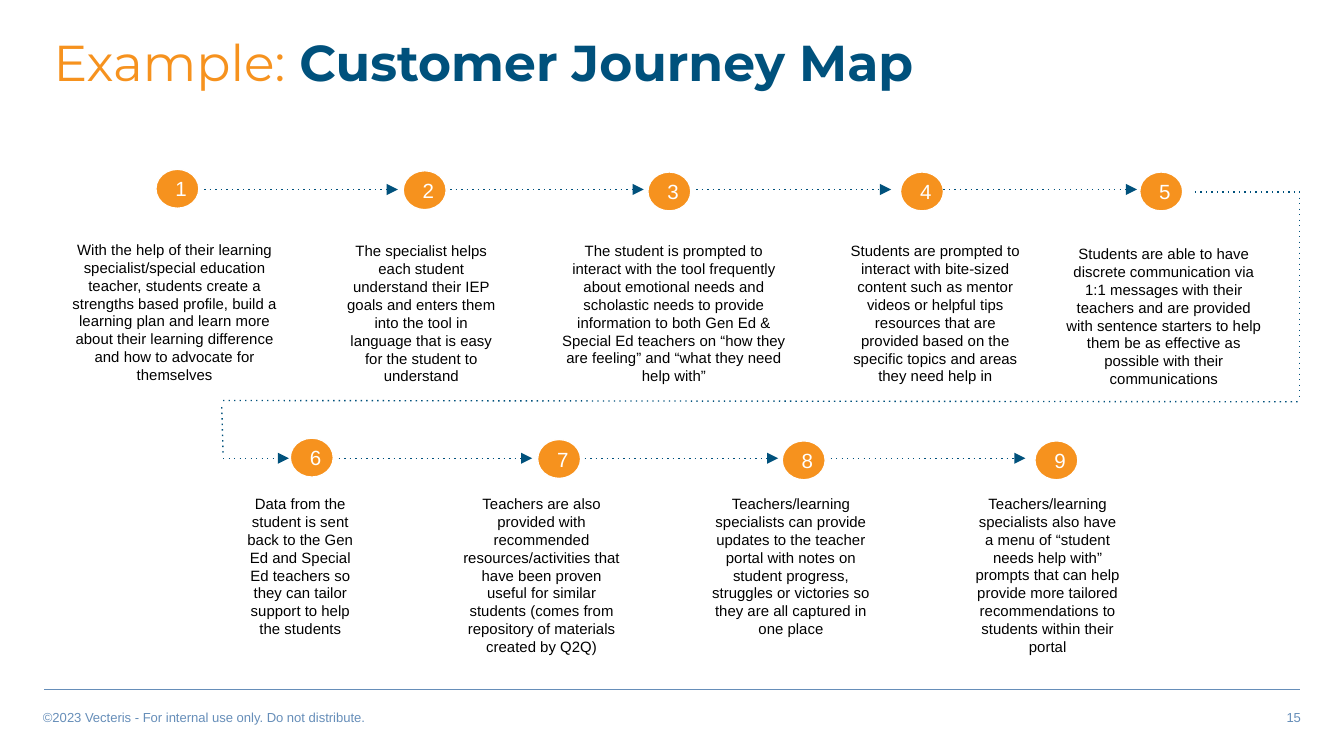
from lxml.etree import SubElement
from pptx import Presentation
from pptx.dml.color import RGBColor
from pptx.enum.shapes import MSO_CONNECTOR, MSO_SHAPE
from pptx.enum.text import MSO_ANCHOR, PP_ALIGN
from pptx.oxml.ns import qn
from pptx.util import Emu, Pt

PX = 9144  # 100 px to the inch
NAVY, ORANGE, BLUE, WHITE, BLACK = "00517C", "F6921E", "668EB9", "FFFFFF", "000000"
DX, DY = 100, 200  # shift from the upper row of steps to the lower one

CIRCLES = [(116, 126), (300, 127), (482, 128), (670, 128), (848, 128)]
ARROWS = [(152, 296), (335, 479), (518, 663), (702, 846)]
ARROW_Y = 141

# left, top, width, height, vertical inset, text
STEPS = [
    (43, 169, 174, 57, 10, "With the help of their learning specialist/special education teacher, "
     "students create a strengths based profile, build a learning plan and learn more about "
     "their learning difference and how to advocate for themselves"),
    (246, 170, 135, 86, 10, "The specialist helps each student understand their IEP goals and "
     "enters them into the tool in language that is easy for the student to understand"),
    (406, 175, 191, 74, 5, "The student is prompted to interact with the tool frequently about "
     "emotional needs and scholastic needs to provide information to both Gen Ed & Special Ed "
     "teachers on “how they are feeling” and “what they need help with”"),
    (619, 170, 154, 86, 10, "Students are prompted to interact with bite-sized content such as "
     "mentor videos or helpful tips resources that are provided based on the specific topics "
     "and areas they need help in"),
    (782, 172, 168, 74, 10, "Students are able to have discrete communication via 1:1 messages "
     "with their teachers and are provided with sentence starters to help them be as effective "
     "as possible with their communications"),
    (172, 358, 103, 88, 10, "Data from the student is sent back to the Gen Ed and Special Ed "
     "teachers so they can tailor support to help the students"),
    (334, 358, 138, 32, 10, "Teachers are also provided with recommended resources/activities "
     "that have been proven useful for similar students (comes from repository of materials "
     "created by Q2Q)"),
    (514, 358, 149, 69, 10, "Teachers/learning specialists can provide updates to the teacher "
     "portal with notes on student progress, struggles or victories so they are all captured "
     "in one place"),
    (714, 358, 131, 57, 10, "Teachers/learning specialists also have a menu of “student needs "
     "help with” prompts that can help provide more tailored recommendations to students "
     "within their portal"),
]


def px(*values):
    return [Emu(v * PX) for v in values]


def rgb(color):
    return RGBColor.from_string(color)


def fill_text(tf, runs, inset, size, font="Arial", align=PP_ALIGN.LEFT):
    """Write one paragraph of (text, colour, bold) runs; inset is (x, y)."""
    x, y = px(*inset)
    frame = {"word_wrap": True, "margin_left": x, "margin_right": x,
             "margin_top": y, "margin_bottom": y}
    for name, value in frame.items():
        setattr(tf, name, value)
    p = tf.paragraphs[0]
    p.alignment = align
    for text, color, bold in runs:
        r = p.add_run()
        r.text = text
        for name, value in {"name": font, "size": Pt(size), "bold": bold}.items():
            setattr(r.font, name, value)
        r.font.color.rgb = rgb(color)
    return p


def add_text(s, box, runs, inset, size, **kwargs):
    tf = s.shapes.add_textbox(*px(*box)).text_frame
    return fill_text(tf, runs, inset, size, **kwargs)


def add_circle(s, x, y, number):
    sp = s.shapes.add_shape(MSO_SHAPE.OVAL, *px(x, y, 32, 29))
    sp.shadow.inherit = False
    sp.fill.solid()
    sp.fill.fore_color.rgb = rgb(ORANGE)
    sp.line.color.rgb = rgb(WHITE)
    sp.line.width = Pt(0.75)
    sp.text_frame.vertical_anchor = MSO_ANCHOR.MIDDLE
    fill_text(sp.text_frame, [(str(number), WHITE, False)], (10, 10), 11)


def add_line(s, ends, color=NAVY, width=0.75, dash="dot", arrow=False):
    line = s.shapes.add_connector(MSO_CONNECTOR.STRAIGHT, *px(*ends))
    line.line.color.rgb = rgb(color)
    line.line.width = Pt(width)
    ln = line.line._get_or_add_ln()
    SubElement(ln, qn("a:prstDash"), val=dash)
    if arrow:
        SubElement(ln, qn("a:tailEnd"), type="triangle")
    SubElement(line._element.spPr, qn("a:effectLst"))


def add_row(s, first, circles, arrows, dx=0, dy=0):
    for number, (x, y) in enumerate(circles, first):
        add_circle(s, x + dx, y + dy, number)
    for x1, x2 in arrows:
        add_line(s, (x1 + dx, ARROW_Y + dy, x2 + dx, ARROW_Y + dy), arrow=True)


def add_return_path(s):
    """Dotted route from step 5 round to step 6."""
    add_line(s, (889, 143, 967, 143))
    add_line(s, (967, 147, 967, 295))
    add_line(s, (166, 298, 967, 299))
    add_line(s, (165, 303, 166, 338))
    add_line(s, (166, 341, 215, 341), arrow=True)


def add_footer(s):
    add_line(s, (33, 513, 967, 513), BLUE, 1, "solid")
    copyright_line = "©2023 Vecteris - For internal use only. Do not distribute."
    for x, text, align in [(25, copyright_line, PP_ALIGN.LEFT), (575, "15", PP_ALIGN.RIGHT)]:
        add_text(s, (x, 524, 400, 19), [(text, BLUE, False)], (7, 4), 7, align=align)


def main():
    prs = Presentation()
    prs.slide_width = Emu(1000 * PX)
    prs.slide_height = Emu(prs.slide_width * 9 // 16)
    s = prs.slides.add_slide(prs.slide_layouts[6])
    add_footer(s)
    title = [("Example:", ORANGE, False), (" Customer Journey Map", NAVY, True)]
    p = add_text(s, (33, 24, 697, 57), title, (7, 4), 27, font="Montserrat")
    p.line_spacing = 0.9
    for *box, inset_y, text in STEPS:
        add_text(s, box, [(text, BLACK, False)], (10, inset_y), 8, align=PP_ALIGN.CENTER)
    add_row(s, 1, CIRCLES, ARROWS)
    add_row(s, 6, CIRCLES[:4], ARROWS[:3], DX, DY)
    add_return_path(s)
    prs.save("out.pptx")


if __name__ == "__main__":
    main()
